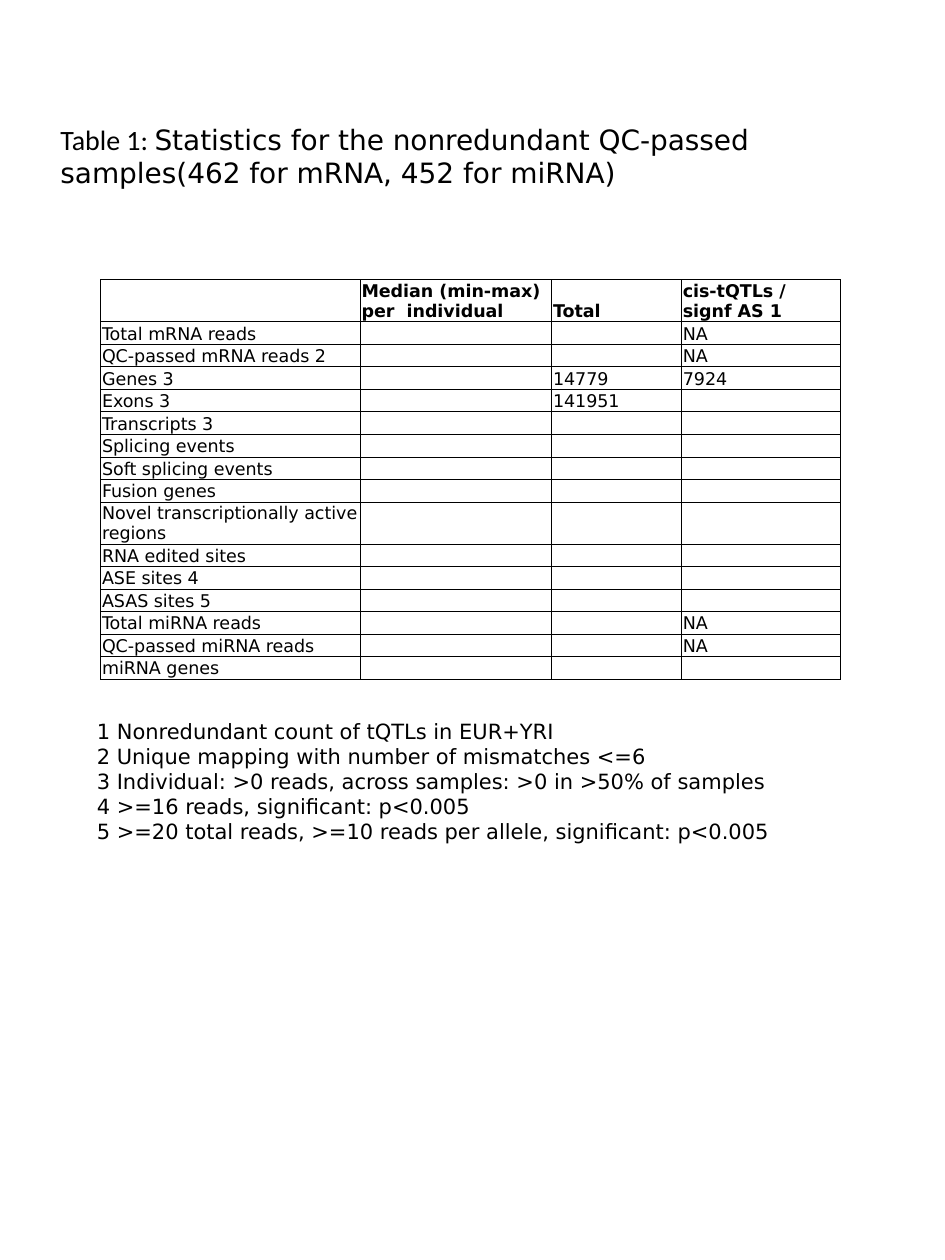
from lxml import etree
from pptx import Presentation
from pptx.dml.color import RGBColor
from pptx.enum.text import MSO_ANCHOR, MSO_AUTO_SIZE, PP_ALIGN
from pptx.oxml import parse_xml
from pptx.oxml.ns import nsdecls, qn
from pptx.util import Inches, Pt

MIDDLE, BOTTOM = MSO_ANCHOR.MIDDLE, MSO_ANCHOR.BOTTOM
LEFT, GROW = PP_ALIGN.LEFT, MSO_AUTO_SIZE.SHAPE_TO_FIT_TEXT

TITLE = [
    ("Table 1: ", "Calibri"),
    ("Statistics for the nonredundant QC-passed samples"
     "(462 for mRNA, 452 for miRNA)", "DejaVu Sans"),
]
HEAD = ("", "Median (min-max) per  individual", "Total",
        "cis-tQTLs / signf AS 1")
ROWS = [
    ("Total mRNA reads", "", "", "NA"),
    ("QC-passed mRNA reads 2", "", "", "NA"),
    ("Genes 3", "", "14779", "7924"),
    ("Exons 3", "", "141951", ""),
    ("Transcripts 3", "", "", ""),
    ("Splicing events", "", "", ""),
    ("Soft splicing events", "", "", ""),
    ("Fusion genes", "", "", ""),
    ("Novel transcriptionally active regions", "", "", ""),
    ("RNA edited sites", "", "", ""),
    ("ASE sites 4", "", "", ""),
    ("ASAS sites 5", "", "", ""),
    ("Total miRNA reads", "", "", "NA"),
    ("QC-passed miRNA reads", "", "", "NA"),
    ("miRNA genes", "", "", ""),
]
NOTES = [
    "1 Nonredundant count of tQTLs in EUR+YRI",
    "2 Unique mapping with number of mismatches <=6",
    "3 Individual: >0 reads, across samples: >0 in >50% of samples",
    "4 >=16 reads, significant: p<0.005",
    "5 >=20 total reads, >=10 reads per allele, significant: p<0.005",
]
THEME = {"ink": "000000", "font": "DejaVu Sans", "title": 16, "cell": 10,
         "note": 12, "line": 0.5}
WIDTHS = (2.06, 1.52, 1.03, 1.26)
TALL, SHORT = 0.33, 0.17
TALL_ROWS = (0, 9)


def style(font, size, name=THEME["font"], bold=False):
    font.size, font.name, font.bold = Pt(size), name, bold
    font.color.rgb = RGBColor.from_string(THEME["ink"])


def border(cell):
    props = cell._tc.get_or_add_tcPr()
    for side in ("lnL", "lnR", "lnT", "lnB"):
        props.append(parse_xml(
            f'<a:{side} {nsdecls("a")} w="{Pt(THEME["line"])}"><a:solidFill>'
            f'<a:srgbClr val="{THEME["ink"]}"/></a:solidFill></a:{side}>'))


def fill_cell(cell, text, bold):
    border(cell)
    cell.fill.background()
    cell.vertical_anchor = BOTTOM
    cell.margin_left = cell.margin_right = cell.margin_top = Inches(0.01)
    cell.margin_bottom = 0
    para = cell.text_frame.paragraphs[0]
    if text:
        para.text = text
        style(para.font, THEME["cell"], bold=bold)
    else:
        end = etree.SubElement(para._p, qn("a:endParaRPr"))
        end.set("sz", str(THEME["cell"] * 100))


def add_title(slide):
    box = slide.shapes.title
    box.left, box.top = Inches(0.38), Inches(0.4)
    box.width, box.height = Inches(6.75), Inches(1.67)
    frame = box.text_frame
    frame.vertical_anchor = MIDDLE
    para = frame.paragraphs[0]
    para.alignment = LEFT
    for text, name in TITLE:
        run = para.add_run()
        run.text = text
        style(run.font, THEME["title"], name)


def add_stats(slide):
    data = [HEAD] + ROWS
    highs = [TALL if i in TALL_ROWS else SHORT for i in range(len(data))]
    table = slide.shapes.add_table(
        len(data), len(HEAD), Inches(0.8), Inches(2.22),
        Inches(sum(WIDTHS)), Inches(sum(highs))).table
    table.horz_banding = False
    table.first_row = False
    for col, width in zip(table.columns, WIDTHS):
        col.width = Inches(width)
    for i, (row, high, texts) in enumerate(zip(table.rows, highs, data)):
        row.height = Inches(high)
        for cell, text in zip(row.cells, texts):
            fill_cell(cell, text, i == 0)


def add_notes(slide):
    box = slide.shapes.add_textbox(
        Inches(0.67), Inches(5.65), Inches(5.88), Inches(1.31))
    frame = box.text_frame
    frame.word_wrap = True
    frame.auto_size = GROW
    frame.text = "\n".join(NOTES)
    for para in frame.paragraphs:
        style(para.font, THEME["note"])


def main():
    deck = Presentation()
    deck.slide_width, deck.slide_height = Inches(7.5), Inches(10)
    slide = deck.slides.add_slide(deck.slide_layouts[5])
    add_title(slide)
    add_stats(slide)
    add_notes(slide)
    deck.save("out.pptx")


if __name__ == "__main__":
    main()
